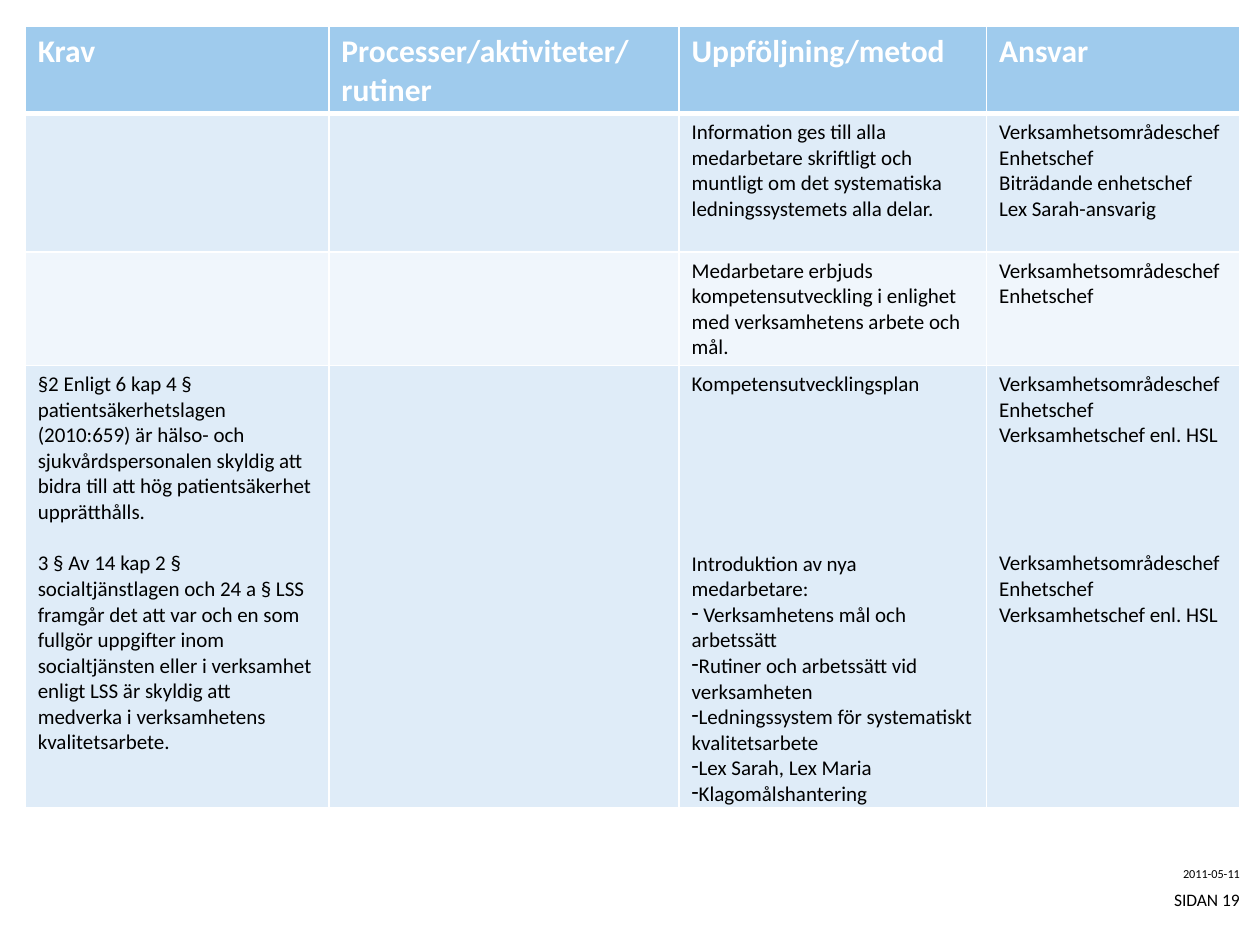
from dataclasses import dataclass

from lxml.etree import SubElement
from pptx import Presentation
from pptx.dml.color import RGBColor as RGB
from pptx.enum.text import MSO_ANCHOR as Anchor, PP_ALIGN as Align
from pptx.oxml.ns import qn
from pptx.util import Inches, Pt


@dataclass(frozen=True)
class Theme:
    """Colours, font and type sizes of the slide."""
    font: str = "Calibri"
    white: str = "FFFFFF"
    black: str = "000000"
    header: str = "9FCBED"
    bands: tuple = ("DFECF8", "F0F6FC")
    header_size: int = 18
    body_size: int = 12
    page_size: int = 10
    date_size: int = 7
    line: float = 14.65


THEME = Theme()
COLUMNS = (2.41, 2.78, 2.44, 2.01)
ROWS = (0.69, 1.1, 0.9, 3.51)
HEADERS = ("Krav", "Processer/aktiviteter/rutiner", "Uppföljning/metod", "Ansvar")
CHIEFS = ("Verksamhetsområdeschef", "Enhetschef")
CARE_CHIEFS = CHIEFS + ("Verksamhetschef enl. HSL",)
PATIENT_LAW = (
    "§2 Enligt 6 kap 4 § patientsäkerhetslagen (2010:659) är hälso- och "
    "sjukvårdspersonalen skyldig att bidra till att hög patientsäkerhet upprätthålls."
)
SOCIAL_LAW = (
    "3 § Av 14 kap 2 § socialtjänstlagen och 24 a § LSS framgår det att var och en "
    "som fullgör uppgifter inom socialtjänsten eller i verksamhet enligt LSS är "
    "skyldig att medverka i verksamhetens kvalitetsarbete."
)
INFORMATION = (
    "Information ges till alla medarbetare skriftligt och muntligt om det "
    "systematiska ledningssystemets alla delar."
)
TRAINING = (
    "Medarbetare erbjuds kompetensutveckling i enlighet med verksamhetens "
    "arbete och mål."
)
INTRODUCTION = (
    " Verksamhetens mål och arbetssätt",
    "Rutiner och arbetssätt vid verksamheten",
    "Ledningssystem för systematiskt kvalitetsarbete",
    "Lex Sarah, Lex Maria",
    "Klagomålshantering",
)


def write(p, text, size, color=THEME.black, bold=False, align=Align.LEFT,
          bullet=None, gap=0):
    """Write one formatted paragraph, with gap counted in body lines."""
    if bullet:
        pPr = p._p.get_or_add_pPr()
        pPr.set("marL", "0")
        pPr.set("indent", "0")
        SubElement(pPr, qn("a:buChar"), char=bullet)
    p.alignment = align
    if gap:
        p.space_before = Pt(gap * THEME.line)
    r = p.add_run()
    r.text = text
    r.font.name, r.font.size, r.font.bold = THEME.font, Pt(size), bold
    r.font.color.rgb = RGB.from_string(color)


def write_all(tf, items, **style):
    """Write a list of texts, each a string or a (text, options) pair."""
    for i, item in enumerate(items):
        text, options = (item, {}) if isinstance(item, str) else item
        p = tf.add_paragraph() if i else tf.paragraphs[0]
        write(p, text, **style, **options)


def format_cell(cell, fill, top=1, bottom=1):
    """Give a cell its fill and white borders."""
    tcPr = cell._tc.get_or_add_tcPr()
    for side, width in zip("LRTB", (1, 1, top, bottom)):
        ln = SubElement(tcPr, qn(f"a:ln{side}"), w=str(Pt(width)))
        SubElement(SubElement(ln, qn("a:solidFill")), qn("a:srgbClr"), val=THEME.white)
    cell.fill.solid()
    cell.fill.fore_color.rgb = RGB.from_string(fill)
    cell.margin_bottom = 0


def add_requirements(s, body):
    """Add the table of requirements, follow-up and responsibility."""
    table = s.shapes.add_table(len(ROWS), len(COLUMNS), Inches(0.2), Inches(0.21),
                               Inches(sum(COLUMNS)), Inches(sum(ROWS))).table
    for column, width in zip(table.columns, COLUMNS):
        column.width = Inches(width)
    for row, height in zip(table.rows, ROWS):
        row.height = Inches(height)
    for c, text in enumerate(HEADERS):
        cell = table.cell(0, c)
        format_cell(cell, THEME.header, bottom=3)
        write_all(cell.text_frame, [text], size=THEME.header_size,
                  color=THEME.white, bold=True)
    for r, contents in enumerate(body, 1):
        for c, items in enumerate(contents):
            cell = table.cell(r, c)
            format_cell(cell, THEME.bands[(r - 1) % 2], top=3 if r == 1 else 1)
            write_all(cell.text_frame, items, size=THEME.body_size)


def add_footer(s, text, top, size):
    """Add a right-aligned footer line."""
    tf = s.shapes.add_textbox(Inches(8.8), Inches(top), Inches(1.04),
                              Inches(0.19)).text_frame
    tf.margin_left = tf.margin_right = tf.margin_top = tf.margin_bottom = 0
    tf.word_wrap = True
    tf.vertical_anchor = Anchor.MIDDLE
    write(tf.paragraphs[0], text, size, align=Align.RIGHT)


def main():
    """Build the slide and save it."""
    prs = Presentation()
    prs.slide_width, prs.slide_height = Inches(10), Inches(7.5)
    s = prs.slides.add_slide(prs.slide_layouts[6])
    plan = ["Kompetensutvecklingsplan", ("Introduktion av nya medarbetare:", {"gap": 6})]
    plan += [(text, {"bullet": "-"}) for text in INTRODUCTION]
    add_requirements(s, (
        ((), (), [INFORMATION], CHIEFS + ("Biträdande enhetschef", "Lex Sarah-ansvarig")),
        ((), (), [TRAINING], CHIEFS),
        ([PATIENT_LAW, (SOCIAL_LAW, {"gap": 1})], (), plan,
         [*CARE_CHIEFS, (CARE_CHIEFS[0], {"gap": 4}), *CARE_CHIEFS[1:]]),
    ))
    add_footer(s, "2011-05-11", 6.84, THEME.date_size)
    add_footer(s, "SIDAN 19", 7.04, THEME.page_size)
    prs.save("out.pptx")


if __name__ == "__main__":
    main()
